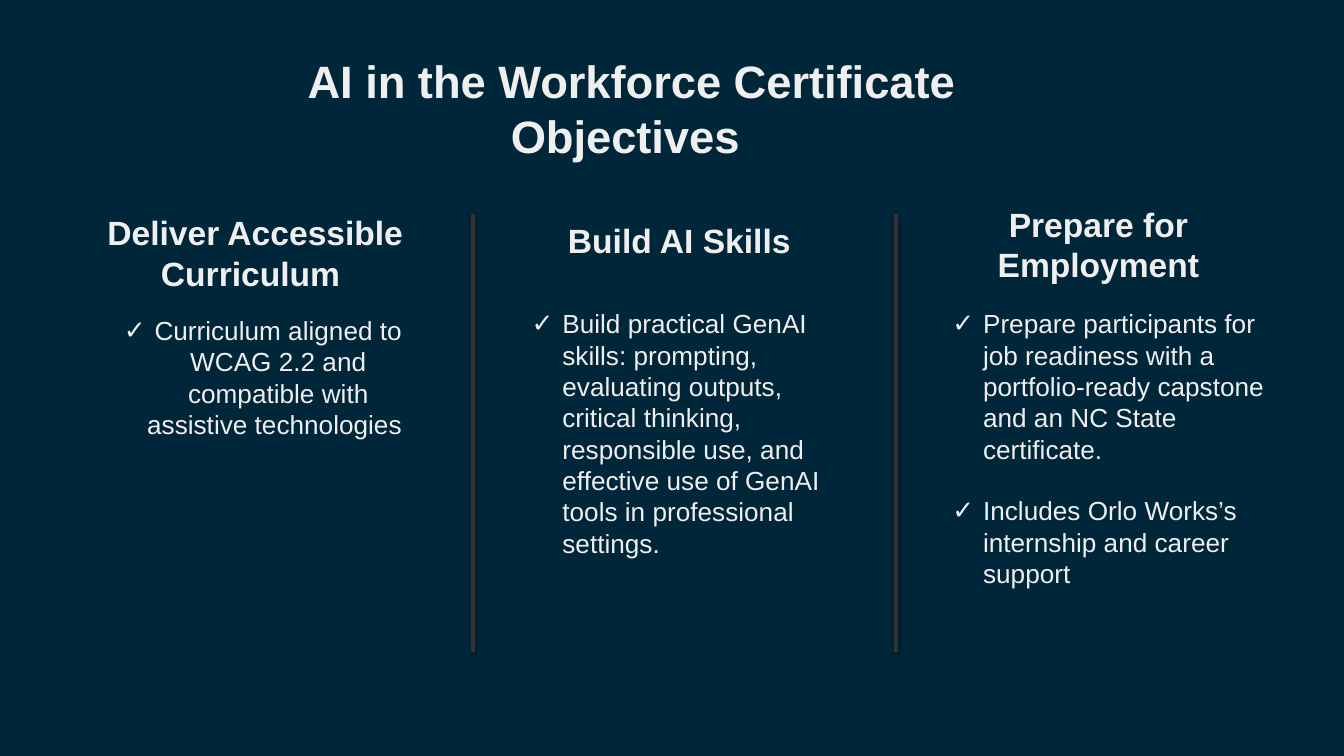
from lxml.etree import SubElement
from pptx import Presentation
from pptx.dml.color import RGBColor
from pptx.enum.shapes import MSO_CONNECTOR
from pptx.enum.text import MSO_ANCHOR, MSO_AUTO_SIZE, PP_ALIGN as Align
from pptx.oxml.ns import qn
from pptx.util import Cm, Pt

FONT = "Arial"
BACKGROUND, TEXT, DIVIDER = "00263A", "F0EFEF", "333333"
INDENT = Cm(0.58)

# heading, heading box, bullets, bullet box, bullet alignment (boxes in cm)
COLUMNS = [
    ("Deliver Accessible Curriculum ", (1.55, 3.89, 6.55, 1.8),
     ["Curriculum aligned to WCAG 2.2 and compatible with assistive technologies "],
     (1.78, 5.82, 6.38, 2.64), Align.CENTER),
    ("Build AI Skills", (9.32, 4.04, 7.04, 1.02),
     ["Build practical GenAI skills: prompting, evaluating outputs, critical thinking, "
      "responsible use, and effective use of GenAI tools in professional settings."],
     (9.8, 5.69, 6.76, 5.05), Align.LEFT),
    ("Prepare for Employment", (17.75, 3.73, 6.02, 1.8),
     ["Prepare participants for job readiness with a portfolio-ready capstone "
      "and an NC State certificate.",
      "Includes Orlo Works’s internship and career support"],
     (17.75, 5.69, 6.63, 6.25), Align.LEFT),
]


def color(hex_string):
    return RGBColor.from_string(hex_string)


def add_text_frame(slide, box, auto_size=MSO_AUTO_SIZE.SHAPE_TO_FIT_TEXT):
    text_frame = slide.shapes.add_textbox(*map(Cm, box)).text_frame
    text_frame.word_wrap = True
    text_frame.auto_size = auto_size
    text_frame.vertical_anchor = MSO_ANCHOR.TOP
    return text_frame


def add_run(paragraph, text, size, bold=False):
    run = paragraph.add_run()
    run.text = text
    run.font.name = FONT
    run.font.size = Pt(size)
    run.font.bold = bold
    run.font.color.rgb = color(TEXT)


def add_check_bullet(paragraph):
    properties = paragraph._p.get_or_add_pPr()
    properties.set("marL", str(INDENT))
    properties.set("indent", str(-INDENT))
    SubElement(properties, qn("a:buFont"), typeface=FONT)
    SubElement(properties, qn("a:buChar"), char="✓")


def add_title(slide, lines, box):
    text_frame = add_text_frame(slide, box, MSO_AUTO_SIZE.NONE)
    text_frame.margin_top = text_frame.margin_bottom = Cm(0.25)
    paragraph = text_frame.paragraphs[0]
    paragraph.alignment = Align.CENTER
    for index, line in enumerate(lines):
        if index:
            paragraph.add_line_break()
        add_run(paragraph, line, 24.3, bold=True)


def add_column(slide, heading, heading_box, bullets, bullet_box, alignment):
    paragraph = add_text_frame(slide, heading_box).paragraphs[0]
    paragraph.alignment = Align.CENTER
    add_run(paragraph, heading, 18, bold=True)

    text_frame = add_text_frame(slide, bullet_box)
    for index, bullet in enumerate(bullets):
        paragraph = text_frame.add_paragraph() if index else text_frame.paragraphs[0]
        add_check_bullet(paragraph)
        paragraph.alignment = alignment
        if index:
            paragraph.space_before = Pt(16.1)
        add_run(paragraph, bullet, 14)


def add_divider(slide, x, top, bottom):
    """Draw a vertical line with a soft shadow below it."""
    line = slide.shapes.add_connector(
        MSO_CONNECTOR.STRAIGHT, Cm(x), Cm(top), Cm(x), Cm(bottom))
    line.line.color.rgb = color(DIVIDER)
    line.line.width = Pt(2)
    effects = SubElement(line._element.spPr, qn("a:effectLst"))
    shadow = SubElement(effects, qn("a:outerShdw"), blurRad=str(Pt(3.1)),
                        dist=str(Pt(1.6)), dir="5400000", rotWithShape="0")
    shade = SubElement(shadow, qn("a:srgbClr"), val="000000")
    SubElement(shade, qn("a:alpha"), val="38000")


def main():
    presentation = Presentation()
    presentation.slide_width, presentation.slide_height = Cm(25.4), Cm(14.29)
    slide = presentation.slides.add_slide(presentation.slide_layouts[6])
    fill = slide.background.fill
    fill.solid()
    fill.fore_color.rgb = color(BACKGROUND)

    add_title(slide, ["AI in the Workforce Certificate", "Objectives "],
              (1.75, 0.76, 20.37, 1.93))
    for column in COLUMNS:
        add_column(slide, *column)
    for x in (16.94, 8.94):
        add_divider(slide, x, 4.04, 12.32)
    presentation.save("out.pptx")


if __name__ == "__main__":
    main()
